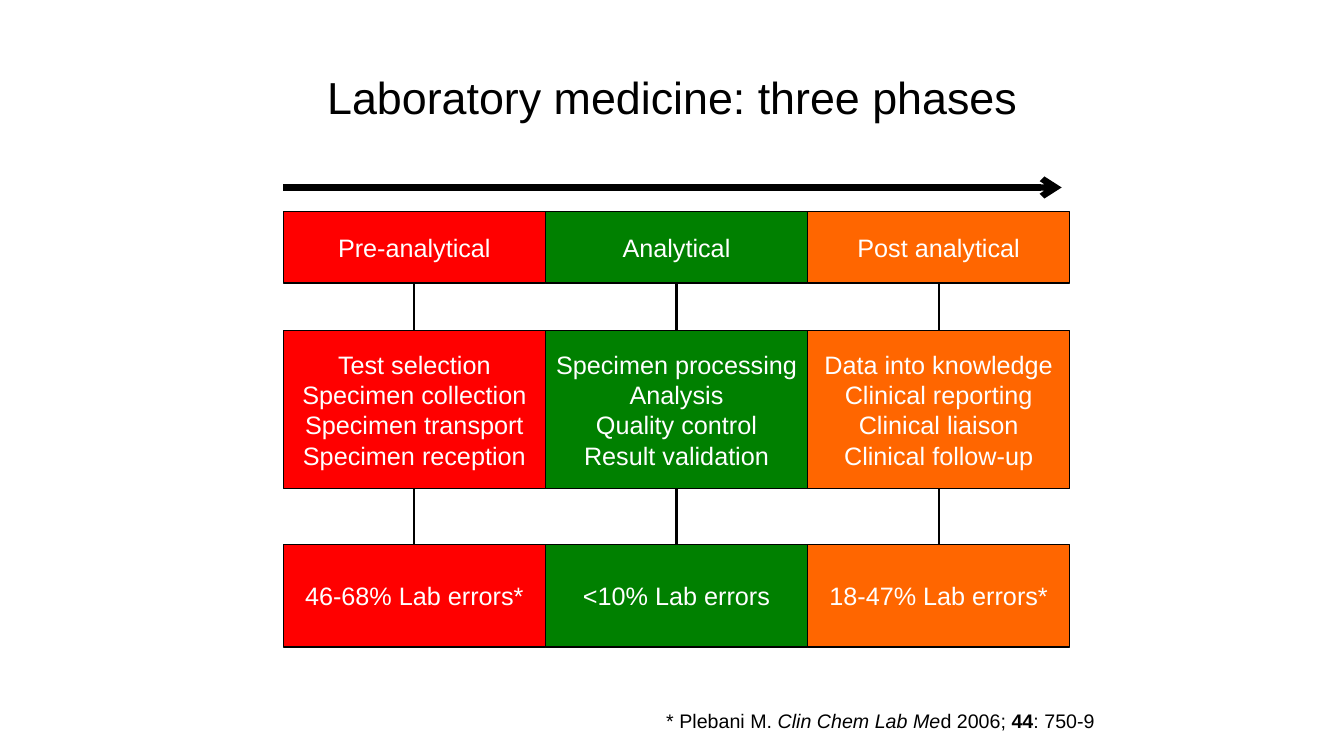
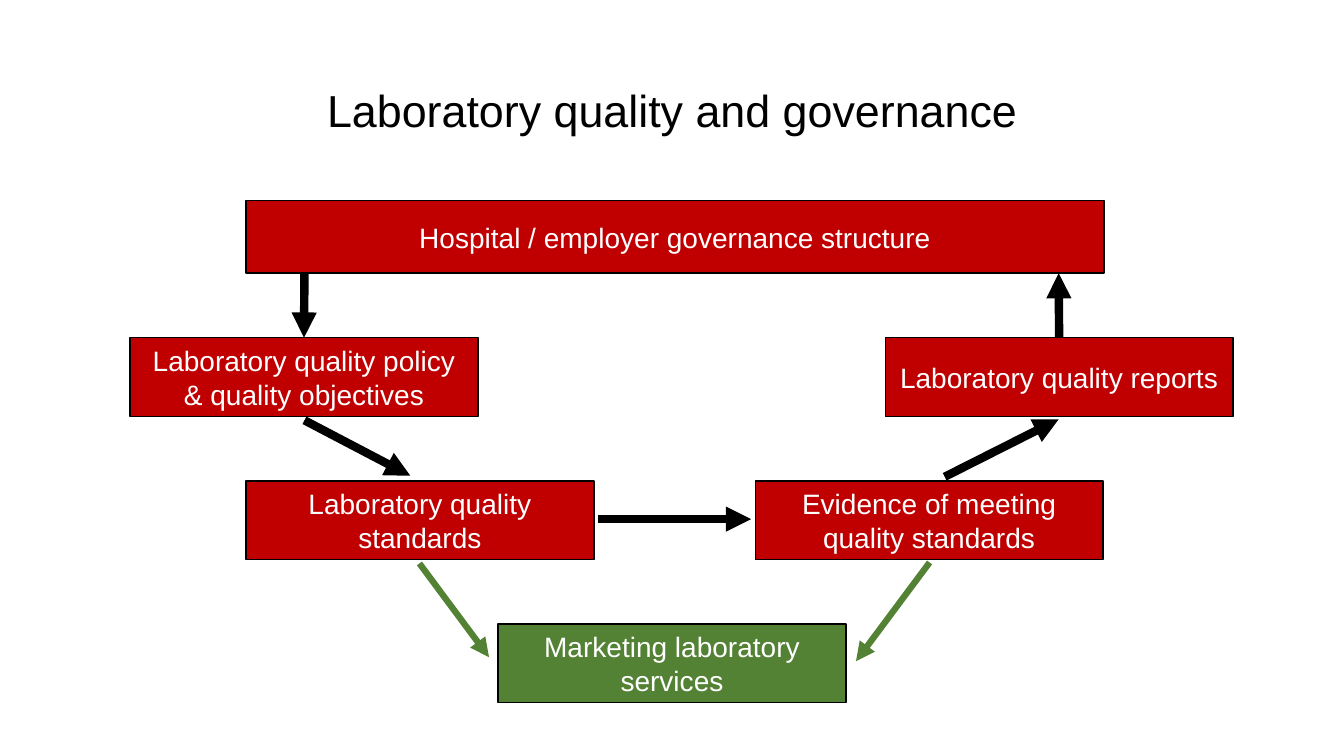
from pptx import Presentation
from pptx import util as u
from pptx.dml.color import RGBColor
from pptx.enum import shapes, text
from pptx.oxml.ns import qn
from lxml import etree

BLACK, WHITE = "000000", "FFFFFF"
RED, GREEN = "C00000", "548235"
TOP, LEFT, BOTTOM = 0, 1, 2

# Slide 1: one column per phase, one row per kind of box
PHASES = [
    ("FF0000", ["Pre-analytical"],
     ["Test selection", "Specimen collection", "Specimen transport",
      "Specimen reception"],
     ["46-68% Lab errors*"]),
    ("008000", ["Analytical"],
     ["Specimen processing", "Analysis", "Quality control",
      "Result validation"],
     ["<10% Lab errors"]),
    ("FF6600", ["Post analytical"],
     ["Data into knowledge", "Clinical reporting", "Clinical liaison",
      "Clinical follow-up"],
     ["18-47% Lab errors*"]),
]
ROWS = [(2.1, 0.71), (3.28, 1.57), (5.4, 1.02)]
START, COL = 2.81, 2.6
SOURCE = [
    ("* Plebani M. ", {}),
    ("Clin Chem Lab Me", {"italic": True}),
    ("d 2006; ", {}),
    ("44", {"bold": True}),
    (": 750-9", {}),
]

# Slide 2: name -> left, top, width, height, fill, text
WIDE, HIGH = 3.45, 0.78
BOXES = {
    "board": (2.44, 1.99, 8.51, 0.72, RED,
              "Hospital / employer governance structure"),
    "policy": (1.29, 3.35, WIDE, HIGH, RED,
               "Laboratory quality policy & quality objectives"),
    "report": (8.78, 3.35, WIDE, HIGH, RED, "Laboratory quality reports"),
    "standard": (2.44, 4.77, WIDE, HIGH, RED,
                 "Laboratory quality standards"),
    "proof": (7.49, 4.77, WIDE, HIGH, RED,
              "Evidence of meeting quality standards"),
    "market": (4.94, 6.19, WIDE, HIGH, GREEN,
               "Marketing laboratory services"),
}
# from, to, colour, width, box joined at the start, box joined at the end
ARROWS = [
    ((3.02, 2.71), (3.02, 3.35), BLACK, 6, None, "policy"),
    ((10.5, 3.35), (10.5, 2.71), BLACK, 6, "report", None),
    ((3.02, 4.17), (4.07, 4.72), BLACK, 6, None, None),
    ((5.93, 5.15), (7.45, 5.15), BLACK, 6, None, None),
    ((9.37, 4.73), (10.5, 4.16), BLACK, 6, None, None),
    ((4.16, 5.59), (4.85, 6.52), GREEN, 4.5, None, None),
    ((9.22, 5.58), (8.49, 6.56), GREEN, 4.5, None, None),
]


def rgb(code):
    return RGBColor.from_string(code)


def style(font, size, color, **extra):
    font.color.rgb = rgb(color)
    values = {"name": "Arial", "size": u.Pt(size), **extra}
    for key, value in values.items():
        setattr(font, key, value)


def new_slide(deck, title, top):
    slide = deck.slides.add_slide(deck.slide_layouts[5])
    head = slide.shapes.title
    spots = {"left": 0.92, "top": top, "width": 11.5, "height": 1.45}
    for key, value in spots.items():
        setattr(head, key, u.Inches(value))
    frame = head.text_frame
    frame.text = title
    frame.vertical_anchor = text.MSO_ANCHOR.MIDDLE
    par = frame.paragraphs[0]
    par.alignment = text.PP_ALIGN.CENTER
    par.line_spacing = 0.9
    style(par.runs[0].font, 32, BLACK)
    return slide


def add_box(slide, spot, fill, lines, size, inset=0.1):
    box = slide.shapes.add_shape(shapes.MSO_SHAPE.RECTANGLE,
                                 *map(u.Inches, spot))
    box.shadow.inherit = False
    box.fill.solid()
    box.fill.fore_color.rgb = rgb(fill)
    box.line.color.rgb = rgb(BLACK)
    box.line.width = u.Pt(1)
    frame = box.text_frame
    frame.word_wrap = True
    frame.vertical_anchor = text.MSO_ANCHOR.MIDDLE
    frame.margin_left = frame.margin_right = u.Inches(inset)
    frame.text = "\n".join(lines)
    for par in frame.paragraphs:
        par.alignment = text.PP_ALIGN.CENTER
        style(par.runs[0].font, size, WHITE)
    return box


def add_line(slide, start, end, color, width, head=None):
    line = slide.shapes.add_connector(shapes.MSO_CONNECTOR.STRAIGHT,
                                      *map(u.Inches, start + end))
    line.line.color.rgb = rgb(color)
    line.line.width = u.Pt(width)
    if head:
        etree.SubElement(line.line._get_or_add_ln(), qn("a:tailEnd"),
                         type=head)
    etree.SubElement(line._element.spPr, qn("a:effectLst"))
    return line


def phase_slide(deck):
    slide = new_slide(deck, "Laboratory medicine: three phases", 0.27)
    add_line(slide, (START, 1.86), (10.53, 1.86), BLACK, 4.5, "arrow")
    for col, (fill, *cells) in enumerate(PHASES):
        left = START + col * COL
        boxes = [add_box(slide, (left, top, COL, high), fill, lines, 18, 0.05)
                 for (top, high), lines in zip(ROWS, cells)]
        # Link each box to the one below
        for upper, lower in zip(boxes, boxes[1:]):
            link = add_line(slide, (0, 0), (0, 0), BLACK, 1.5)
            link.begin_connect(upper, BOTTOM)
            link.end_connect(lower, TOP)

    # Reference
    note = slide.shapes.add_textbox(*map(u.Inches, (6.51, 6.98, 4.47, 0.34)))
    note.text_frame.word_wrap = False
    par = note.text_frame.paragraphs[0]
    for words, extra in SOURCE:
        run = par.add_run()
        run.text = words
        style(run.font, 14, BLACK, **extra)


def quality_slide(deck):
    slide = new_slide(deck, "Laboratory quality and governance", 0.4)
    made = {name: add_box(slide, spot, fill, [words], 20)
            for name, (*spot, fill, words) in BOXES.items()}
    for start, end, color, width, first, last in ARROWS:
        line = add_line(slide, start, end, color, width, "triangle")
        if first:
            line.begin_connect(made[first], TOP)
        if last:
            line.end_connect(made[last], TOP)


def main():
    deck = Presentation()
    deck.slide_width, deck.slide_height = u.Inches(13.33), u.Inches(7.5)
    phase_slide(deck)
    quality_slide(deck)
    deck.save("out.pptx")


if __name__ == "__main__":
    main()
